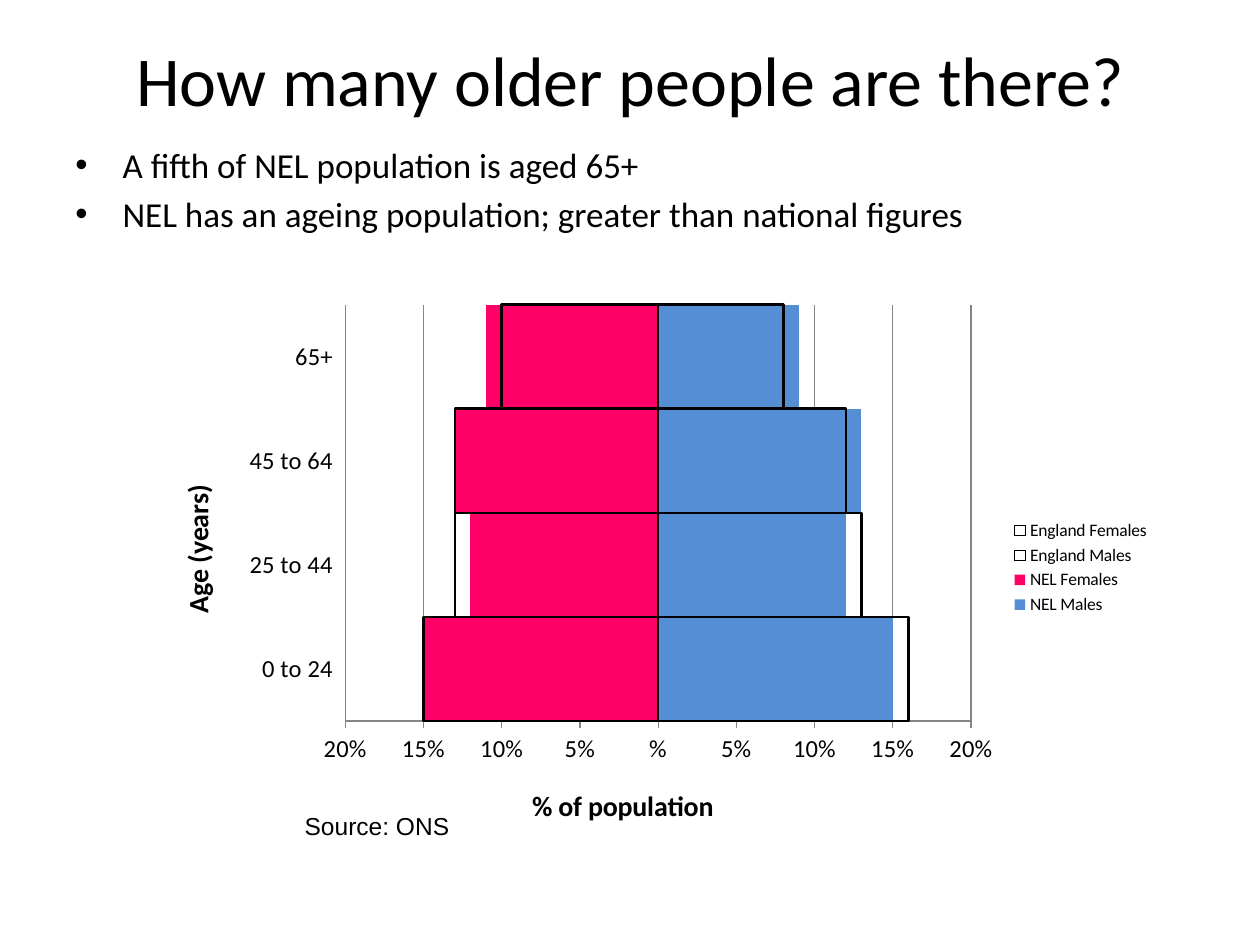
from pptx import Presentation
from pptx.chart.data import CategoryChartData
from pptx.dml.color import RGBColor
from pptx.enum.chart import XL_CHART_TYPE, XL_LEGEND_POSITION, XL_TICK_LABEL_POSITION, XL_TICK_MARK
from pptx.enum.text import MSO_ANCHOR, PP_ALIGN
from pptx.oxml import parse_xml
from pptx.oxml.ns import nsdecls
from pptx.util import Pt

BAR = XL_CHART_TYPE.BAR_CLUSTERED
RIGHT = XL_LEGEND_POSITION.RIGHT
LOW = XL_TICK_LABEL_POSITION.LOW
NONE, OUT = XL_TICK_MARK.NONE, XL_TICK_MARK.OUTSIDE
MID, CENTER = MSO_ANCHOR.MIDDLE, PP_ALIGN.CENTER

BLACK, GREY, BLUE, PINK = "000000", "868686", "558ED5", "FF0066"
AGES = ["0 to 24", "25 to 44", "45 to 64", "65+"]
GROUPS = [
    ("NEL Males", [0.15, 0.12, 0.13, 0.09], BLUE),
    ("NEL Females", [-0.15, -0.12, -0.13, -0.11], PINK),
    ("England Males", [0.16, 0.13, 0.12, 0.08], None),
    ("England Females", [-0.15, -0.13, -0.13, -0.1], None),
]


def color(code):
    return RGBColor.from_string(code)


def layout(x, y, w=None, h=None):
    parts = '<c:layoutTarget val="inner"/>' if w else ""
    parts += '<c:xMode val="edge"/><c:yMode val="edge"/>'
    for tag, val in zip("xywh", (x, y, w, h)):
        if val is not None:
            parts += f'<c:{tag} val="{val}"/>'
    return parse_xml(f'<c:layout {nsdecls("c")}><c:manualLayout>{parts}</c:manualLayout></c:layout>')


class Deck:
    def __init__(self):
        self.prs = Presentation()
        self.prs.slide_width, self.prs.slide_height = Pt(720), Pt(540)
        self.slide = self.prs.slides.add_slide(self.prs.slide_layouts[5])

    def style(self, font, size, face="Calibri", bold=False):
        font.name, font.size, font.bold = face, Pt(size), bold
        font.color.rgb = color(BLACK)

    def run(self, para, text, size, face="Calibri", bold=False):
        run = para.add_run()
        run.text = text
        self.style(run.font, size, face, bold)

    def title(self, text, box, size):
        shape = self.slide.shapes.title
        shape.left, shape.top, shape.width, shape.height = map(Pt, box)
        frame = shape.text_frame
        frame.vertical_anchor = MID
        frame.paragraphs[0].alignment = CENTER
        self.run(frame.paragraphs[0], text, size)

    def text(self, lines, box, size, face="Calibri", wrap=True, bullet=False):
        frame = self.slide.shapes.add_textbox(*map(Pt, box)).text_frame
        frame.word_wrap = wrap
        for i, line in enumerate(lines):
            para = frame.add_paragraph() if i else frame.paragraphs[0]
            if bullet:
                props = para._p.get_or_add_pPr()
                props.set("marL", str(Pt(27)))
                props.set("indent", str(-Pt(27)))
                props.append(parse_xml(f'<a:buFont {nsdecls("a")} typeface="Arial"/>'))
                props.append(parse_xml(f'<a:buChar {nsdecls("a")} char="•"/>'))
            if i:
                para.space_before = Pt(4)
            self.run(para, line, size, face)

    def axis(self, axis, text, tick, place):
        axis.major_tick_mark, axis.minor_tick_mark = tick, NONE
        axis.tick_label_position = LOW
        axis.format.line.color.rgb = color(GREY)
        self.style(axis.tick_labels.font, 14)
        title = axis.axis_title
        self.run(title.text_frame.paragraphs[0], text, 16, bold=True)
        node = title._element
        for old in node.findall(layout(0, 0).tag):
            node.remove(old)
        node.tx.addnext(layout(*place)) if hasattr(node, "tx") else node[0].addnext(layout(*place))

    def chart(self, box):
        data = CategoryChartData()
        data.categories = AGES
        for name, vals, _ in GROUPS:
            data.add_series(name, vals)
        chart = self.slide.shapes.add_chart(BAR, *map(Pt, box), data).chart
        self.style(chart.font, 10)
        chart.has_title = False
        chart.has_legend = True
        chart.legend.position = RIGHT
        chart.legend.include_in_layout = False
        self.style(chart.legend.font, 10)

        plot = chart.plots[0]
        plot.gap_width, plot.overlap = 0, 100
        plot.vary_by_categories = False
        for series, (_, _, fill) in zip(plot.series, GROUPS):
            series.invert_if_negative = False
            if fill:
                series.format.fill.solid()
                series.format.fill.fore_color.rgb = color(fill)
            else:
                series.format.fill.background()
                series.format.line.color.rgb = color(BLACK)
                series.format.line.width = Pt(1.5)

        self.axis(chart.category_axis, "Age (years)", NONE, (0.02, 0.34))
        val = chart.value_axis
        self.axis(val, "% of population", OUT, (0.37, 0.89))
        val.minimum_scale, val.maximum_scale, val.major_unit = -0.2, 0.2, 0.05
        val.tick_labels.number_format = "#,###%;#,###%"
        val.tick_labels.number_format_is_linked = False
        val.has_major_gridlines = True
        val.major_gridlines.format.line.color.rgb = color(GREY)

        area = chart._chartSpace.chart.plotArea
        for old in area.findall(layout(0, 0).tag):
            area.remove(old)
        area.insert(0, layout(0.19, 0.02, 0.62, 0.76))


def main():
    deck = Deck()
    deck.title("How many older people are there?", (36, 0, 648, 90), 40)
    deck.text(
        ["A fifth of NEL population is aged 65+",
         "NEL has an ageing population; greater than national figures"],
        (36, 78.5, 648, 381.6), 20, bullet=True)
    deck.chart((87.8, 167.8, 576.7, 313.2))
    deck.text(["Source: ONS"], (167, 460, 98, 24.5), 14, face="Arial", wrap=False)
    deck.prs.save("out.pptx")


if __name__ == "__main__":
    main()
